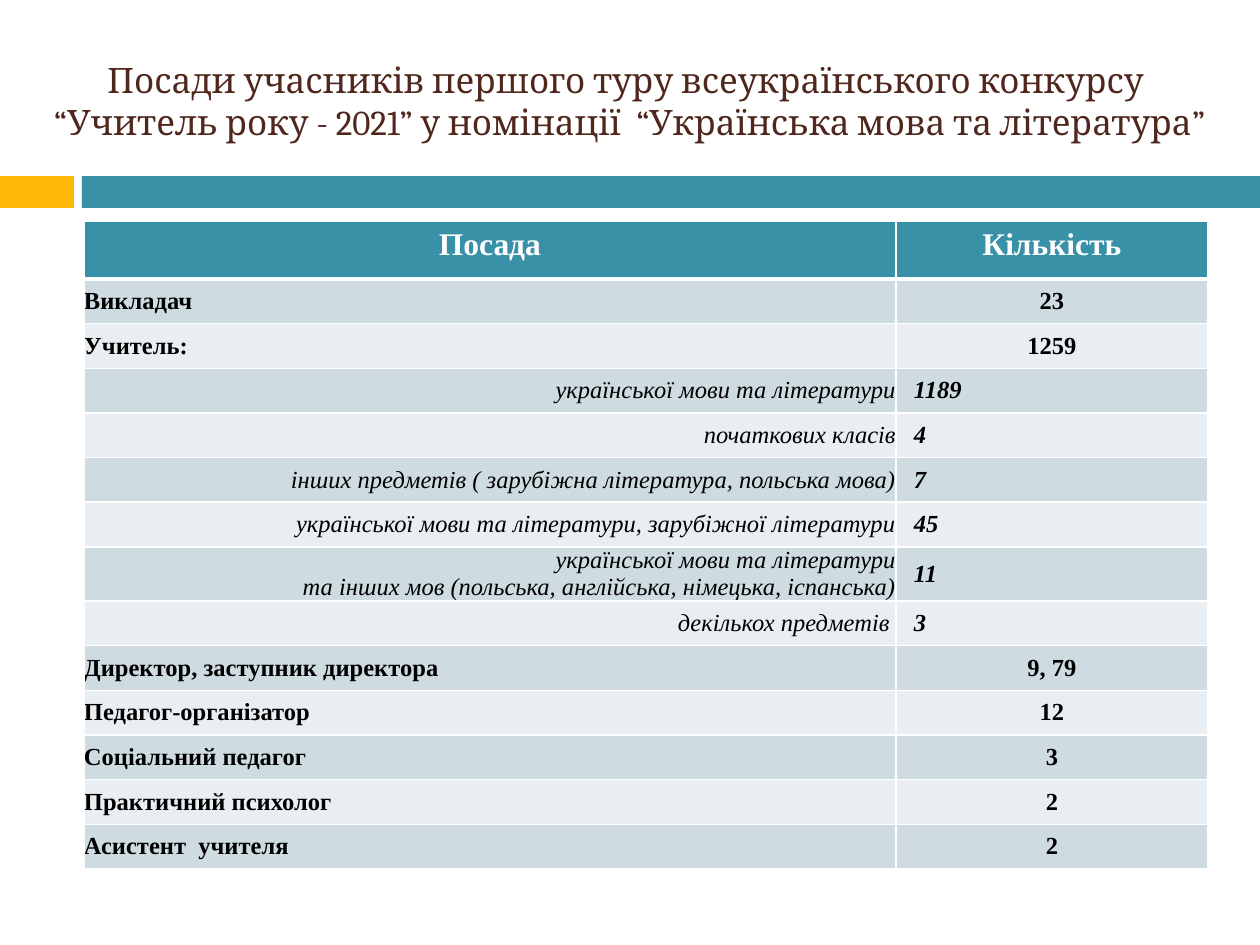
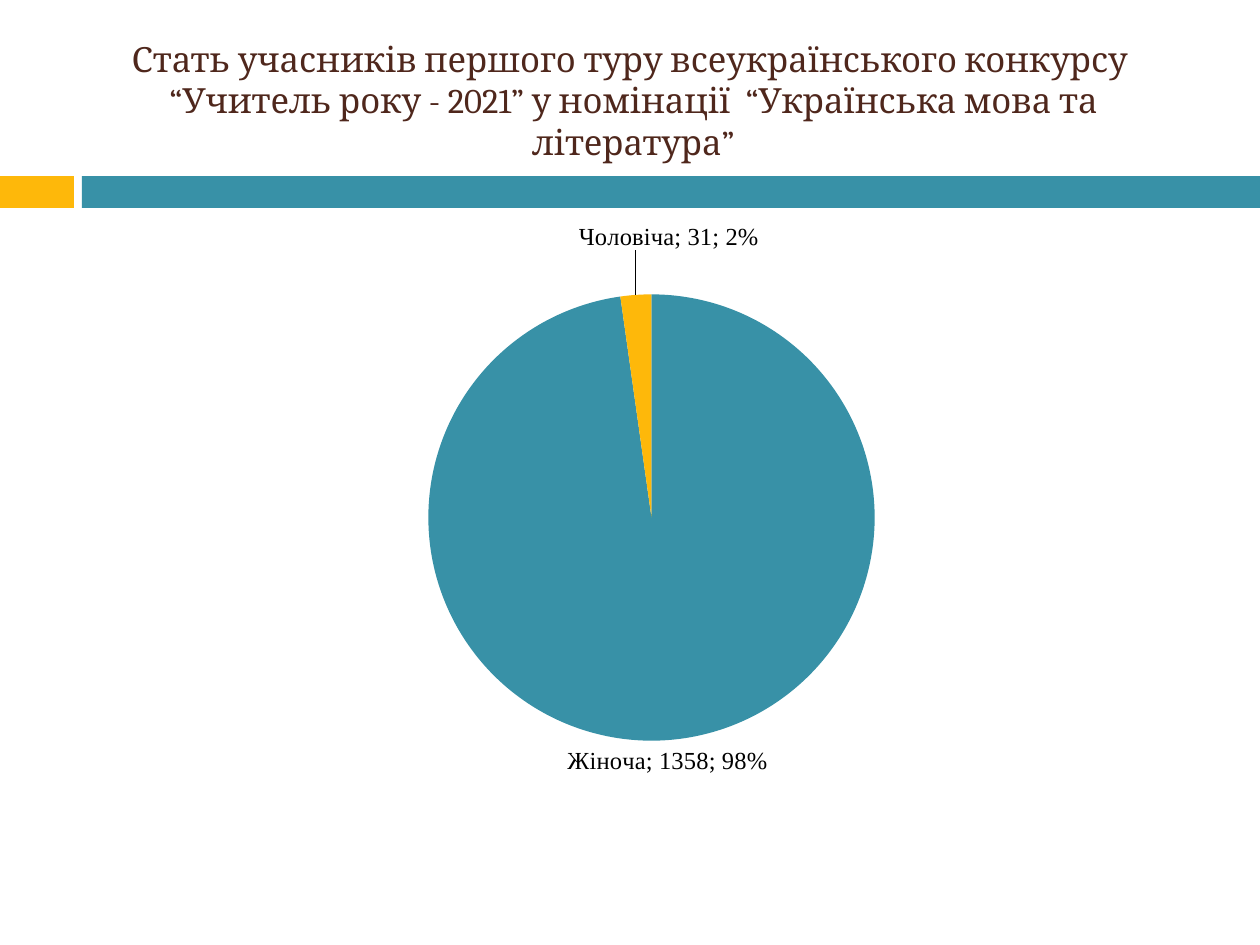
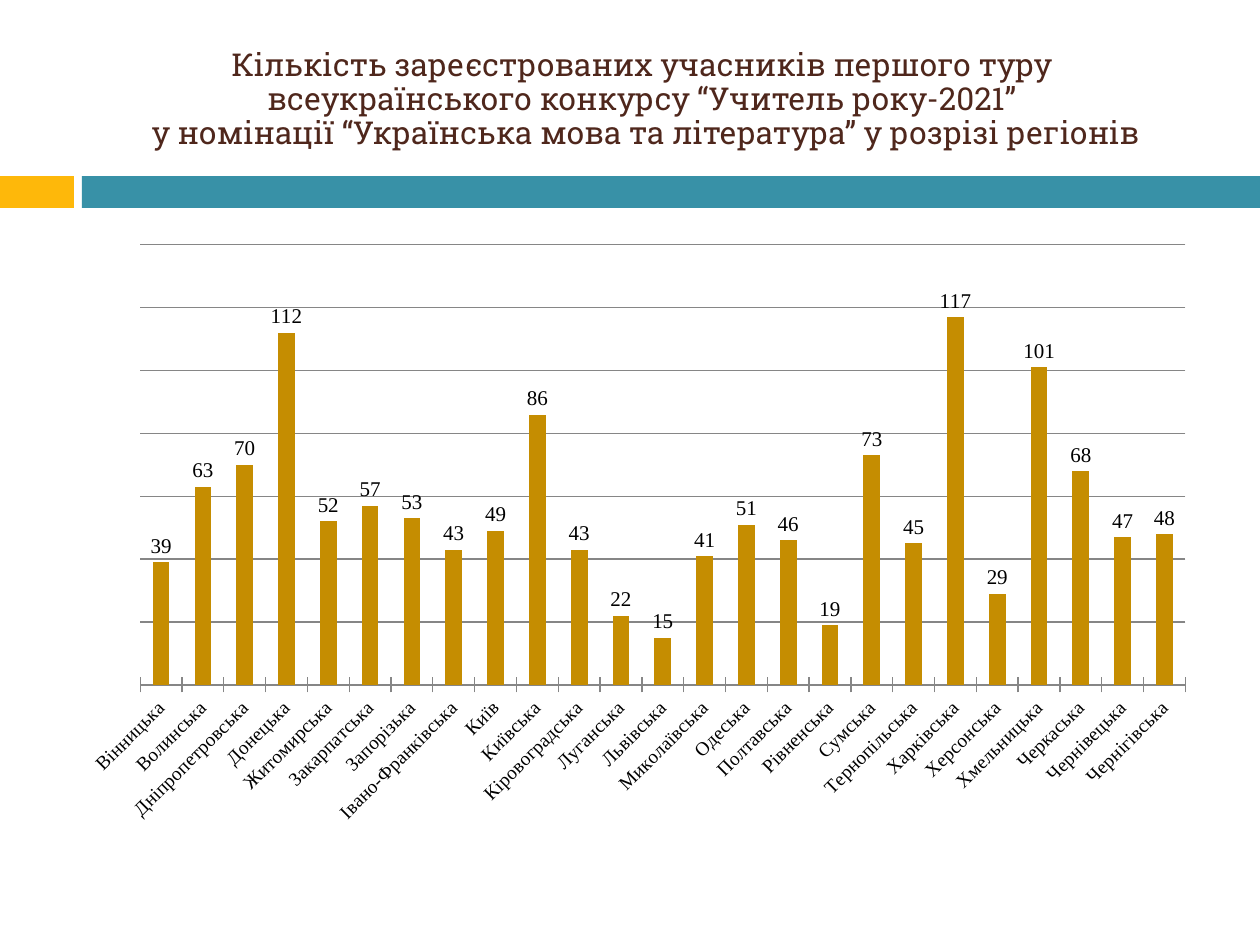
from copy import deepcopy

from pptx import Presentation
from pptx import util as u
from pptx.chart.data import CategoryChartData
from pptx.dml.color import RGBColor
from pptx.enum import chart as ch
from pptx.enum import shapes, text
from pptx.oxml import parse_xml
from pptx.oxml.ns import nsdecls, qn

TEAL = RGBColor(0x38, 0x91, 0xA7)
AMBER = RGBColor(0xFE, 0xB8, 0x0A)
OCHRE = RGBColor(0xC5, 0x8D, 0x01)
BROWN = RGBColor(0x4F, 0x27, 0x1C)
GREY = RGBColor(0x86, 0x86, 0x86)
BLACK = RGBColor(0, 0, 0)
WHITE = RGBColor(0xFF, 0xFF, 0xFF)
ROW_FILLS = (RGBColor(0xCE, 0xDC, 0xE1), RGBColor(0xE8, 0xEE, 0xF1))

SERIF = "Times New Roman"
LEFT, RIGHT, CENTER = text.PP_ALIGN.LEFT, text.PP_ALIGN.RIGHT, text.PP_ALIGN.CENTER
CHART_BOX = (84, 220, 1124, 620)

# (position, count, is a kind of teacher)
POSITIONS = [
    ("Викладач", "23", False),
    ("Учитель:", "1259", False),
    ("української мови та літератури", "1189", True),
    ("початкових класів", "4", True),
    ("інших предметів ( зарубіжна література, польська мова)", "7", True),
    ("української мови та літератури, зарубіжної літератури", "45", True),
    ("української мови та літератури\n"
     "та інших мов (польська, англійська, німецька, іспанська)", "11", True),
    ("декількох предметів ", "3", True),
    ("Директор, заступник директора", "9, 79", False),
    ("Педагог-організатор", "12", False),
    ("Соціальний педагог", "3", False),
    ("Практичний психолог", "2", False),
    ("Асистент  учителя", "2", False),
]

SEXES = {"Жіноча": 1358, "Чоловіча": 31}

REGIONS = {
    "Вінницька": 39, "Волинська": 63, "Дніпропетровська": 70, "Донецька": 112,
    "Житомирська": 52, "Закарпатська": 57, "Запорізька": 53,
    "Івано-Франківська": 43, "Київ": 49, "Київська": 86, "Кіровоградська": 43,
    "Луганська": 22, "Львівська": 15, "Миколаївська": 41, "Одеська": 51,
    "Полтавська": 46, "Рівненська": 19, "Сумська": 73, "Тернопільська": 45,
    "Харківська": 117, "Херсонська": 29, "Хмельницька": 101, "Черкаська": 68,
    "Чернівецька": 47, "Чернігівська": 48,
}


def px(n):
    return u.Emu(round(n * 914400 / 126))


def style_font(font, name, size, color, bold=False, italic=False):
    font.name, font.size = name, u.Pt(size)
    font.bold, font.italic = bold, italic
    font.color.rgb = color


def border_cell(cell, top=1, bottom=1):
    """White borders; widths in points."""
    tc_pr = cell._tc.get_or_add_tcPr()
    for i, (side, width) in enumerate(zip("LRTB", (1, 1, top, bottom))):
        tc_pr.insert(i, parse_xml(
            f'<a:ln{side} {nsdecls("a")} w="{u.Pt(width)}"><a:solidFill>'
            f'<a:srgbClr val="{WHITE}"/></a:solidFill></a:ln{side}>'))


class Deck:
    def __init__(self):
        self.prs = Presentation()
        self.prs.slide_width, self.prs.slide_height = px(1260), px(945)
        self.s = None

    def slide(self, title, left, width, font, size, spacing=1.0):
        self.s = self.prs.slides.add_slide(self.prs.slide_layouts[5])
        self.band(0, 74, AMBER)
        self.band(82, 1178, TEAL)
        sp = self.s.shapes.title
        sp.left, sp.top, sp.width, sp.height = map(px, (left, 32, width, 136))
        tf = sp.text_frame
        tf.text = title
        tf.word_wrap, tf.auto_size = True, text.MSO_AUTO_SIZE.NONE
        tf.vertical_anchor = text.MSO_ANCHOR.MIDDLE
        p = tf.paragraphs[0]
        p.alignment, p.line_spacing = CENTER, spacing
        for r in p.runs:
            style_font(r.font, font, size, BROWN)

    def band(self, left, width, color):
        sp = self.s.shapes.add_shape(shapes.MSO_SHAPE.RECTANGLE,
                                     *map(px, (left, 176, width, 32)))
        sp.shadow.inherit = False
        sp.fill.solid()
        sp.fill.fore_color.rgb = color
        sp.line.fill.background()

    def cell(self, cell, content, fill, align, size, color, bold=True, italic=False):
        cell.text = content
        cell.fill.solid()
        cell.fill.fore_color.rgb = fill
        for p in cell.text_frame.paragraphs:
            p.alignment = align
            for r in p.runs:
                style_font(r.font, SERIF, size, color, bold, italic)

    def table(self, header, rows):
        frame = self.s.shapes.add_table(len(rows) + 1, 2,
                                        *map(px, (84, 221, 1124, 649)))
        table = frame.table
        table.horz_banding = False
        for column, width in zip(table.columns, (812, 312)):
            column.width = px(width)
        table.rows[0].height = px(58)
        for c, name in enumerate(header):
            cell = table.cell(0, c)
            self.cell(cell, name, TEAL, CENTER, 18, WHITE)
            border_cell(cell, bottom=3)
        for n, (position, count, detail) in enumerate(rows, 1):
            table.rows[n].height = px(54) if "\n" in position else px(536) // 12
            fill = ROW_FILLS[(n - 1) % 2]
            name, value = table.cell(n, 0), table.cell(n, 1)
            self.cell(name, position, fill, RIGHT if detail else LEFT, 14, BLACK,
                      not detail, detail)
            self.cell(value, count, fill, LEFT if detail else CENTER, 14, BLACK,
                      True, detail)
            for cell in (name, value):
                cell.vertical_anchor = text.MSO_ANCHOR.MIDDLE
                cell.margin_left = cell.margin_right = 0
                cell.margin_top = cell.margin_bottom = 0
                border_cell(cell, top=3 if n == 1 else 1)
            if detail:
                value.margin_left = px(18)

    def chart(self, kind, values, plot_area, font, size):
        """plot_area: left, top, width, height as shares of the chart."""
        data = CategoryChartData()
        data.categories = list(values)
        data.add_series("Series 1", list(values.values()))
        chart = self.s.shapes.add_chart(kind, *map(px, CHART_BOX), data).chart
        chart.has_legend = chart.has_title = False
        style_font(chart.font, font, size, BLACK)
        area = chart._chartSpace.chart.plotArea
        for old in area.findall(qn("c:layout")):
            area.remove(old)
        places = "".join(f'<c:{tag} val="{v}"/>' for tag, v in zip("xywh", plot_area))
        area.insert(0, parse_xml(
            f'<c:layout {nsdecls("c")}><c:manualLayout><c:layoutTarget val="inner"/>'
            f'<c:xMode val="edge"/><c:yMode val="edge"/>{places}'
            '</c:manualLayout></c:layout>'))
        return chart

    def pie(self, values, colors):
        chart = self.chart(ch.XL_CHART_TYPE.PIE, values, (0.13, 0.12, 0.75, 0.72),
                           "Cabin", 10)
        series = chart.plots[0].series[0]
        for i, color in enumerate(colors):
            fill = series.points[i].format.fill
            fill.solid()
            fill.fore_color.rgb = color
        labels = series.data_labels
        style_font(labels.font, SERIF, 14, BLACK)
        labels.show_value = labels.show_percentage = labels.show_category_name = True
        labels.position = ch.XL_LABEL_POSITION.OUTSIDE_END
        element = labels._element
        element.find(qn("c:showBubbleSize")).addnext(
            parse_xml(f'<c:separator {nsdecls("c")}>; </c:separator>'))
        self.shift_label(element, 1, 0.03, -0.06)

    def shift_label(self, labels, point, dx, dy):
        """Move one label off its point, so that a leader line joins them."""
        label = parse_xml(
            f'<c:dLbl {nsdecls("c")}><c:idx val="{point}"/><c:layout><c:manualLayout>'
            f'<c:x val="{dx}"/><c:y val="{dy}"/></c:manualLayout></c:layout></c:dLbl>')
        for child in labels:
            if child.tag != qn("c:showLeaderLines"):
                label.append(deepcopy(child))
        labels.insert(0, label)

    def columns(self, values, color):
        chart = self.chart(ch.XL_CHART_TYPE.COLUMN_CLUSTERED, values,
                           (0.05, 0.04, 0.93, 0.71), SERIF, 12)
        plot = chart.plots[0]
        plot.gap_width, plot.vary_by_categories = 150, False
        series = plot.series[0]
        series.format.fill.solid()
        series.format.fill.fore_color.rgb = color
        labels = series.data_labels
        labels.show_value = True
        labels.position = ch.XL_LABEL_POSITION.OUTSIDE_END
        style_font(labels.font, SERIF, 12, BLACK)
        value_axis, axis = chart.value_axis, chart.category_axis
        value_axis.minimum_scale, value_axis.maximum_scale = 0, 140
        value_axis.major_unit = 20
        value_axis.has_major_gridlines = True
        value_axis.visible = False
        axis.major_tick_mark = ch.XL_TICK_MARK.CROSS
        style_font(axis.tick_labels.font, SERIF, 11, BLACK)
        axis._element.find(qn("c:txPr")).find(qn("a:bodyPr")).set("rot", "-2700000")
        for line in (value_axis.major_gridlines.format.line, axis.format.line):
            line.color.rgb, line.width = GREY, u.Pt(0.75)


def main():
    deck = Deck()
    contest = ("учасників першого туру всеукраїнського конкурсу \v"
               "“Учитель року - 2021” у номінації  “Українська мова та література”")

    deck.slide(f"Посади {contest}", 29, 1201, "Cambria", 20)
    deck.table(("Посада", "Кількість"), POSITIONS)

    deck.slide(f"Стать {contest}", 59, 1149, "Cambria", 19.8)
    deck.pie(SEXES, (TEAL, AMBER))

    deck.slide("Кількість зареєстрованих учасників першого туру \v"
               "всеукраїнського конкурсу “Учитель року-2021” \v"
               "у номінації “Українська мова та література” у розрізі регіонів",
               84, 1124, "Roboto Slab", 18, spacing=0.9)
    deck.columns(REGIONS, OCHRE)

    deck.prs.save("out.pptx")


if __name__ == "__main__":
    main()
